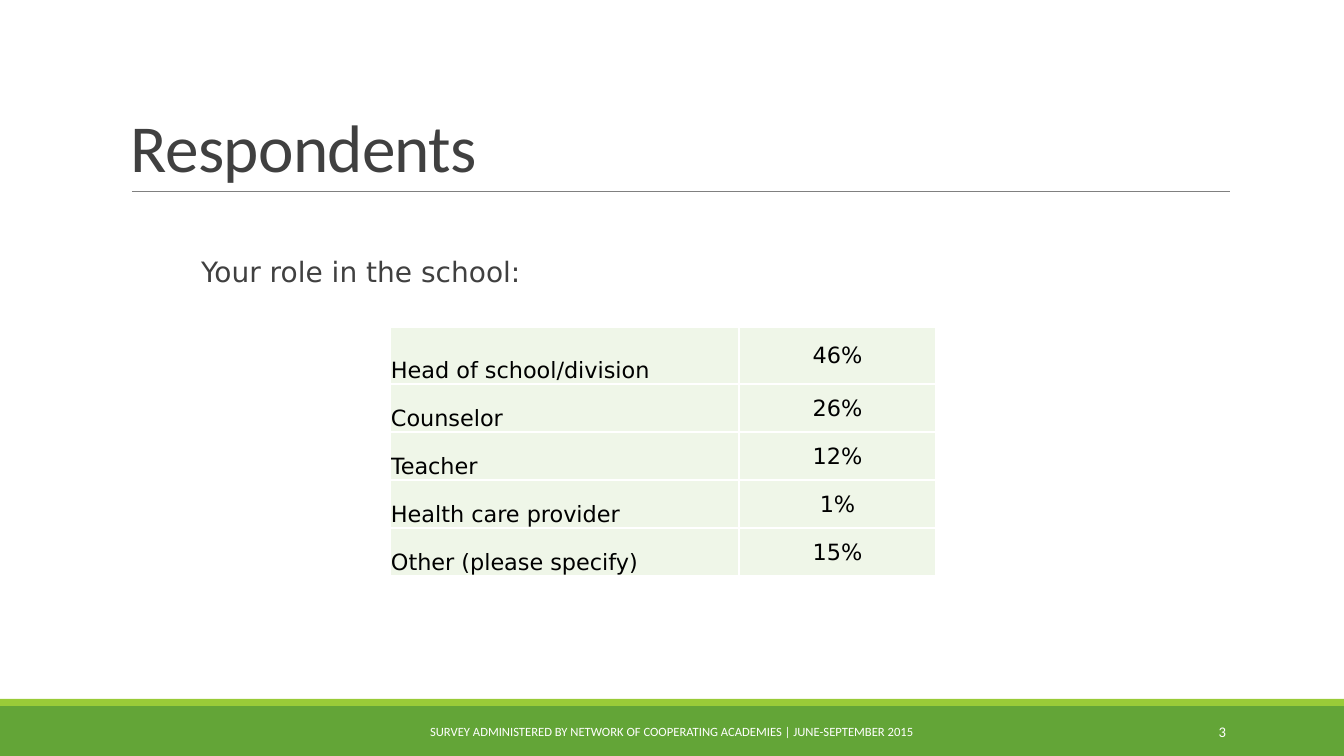
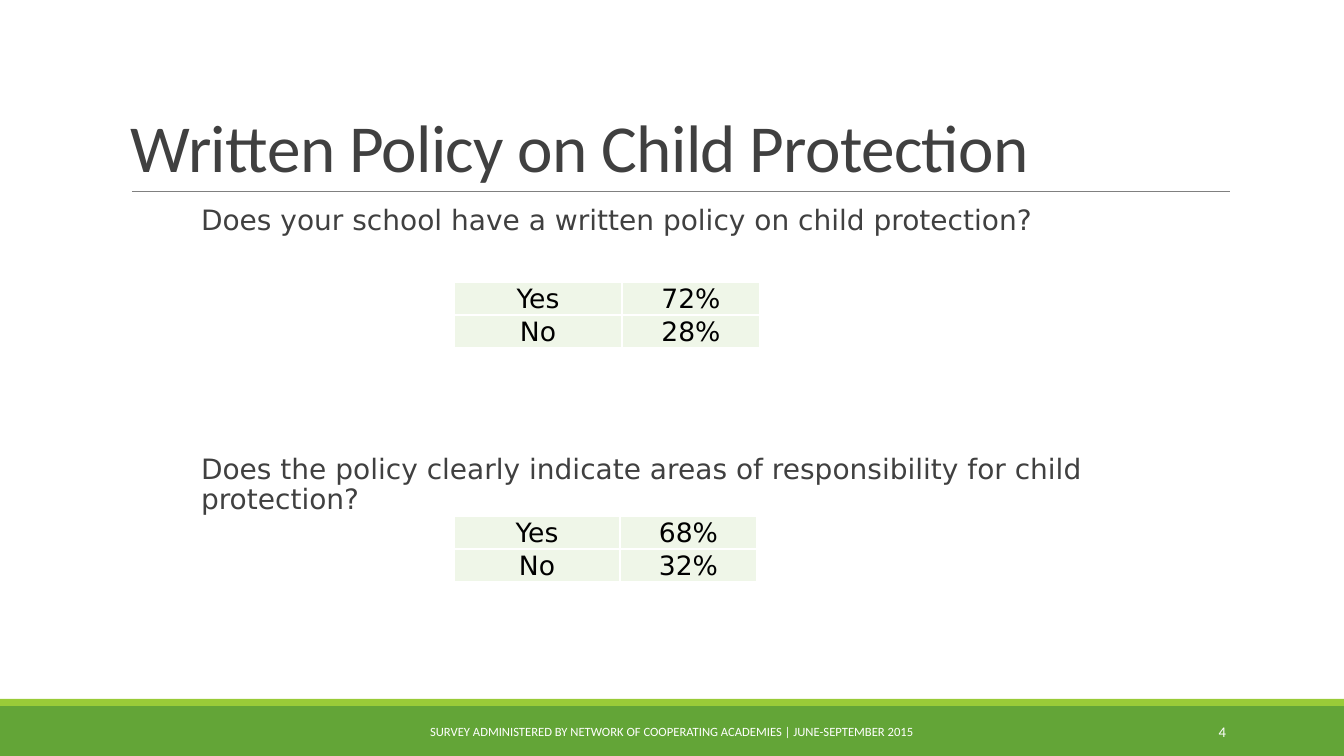
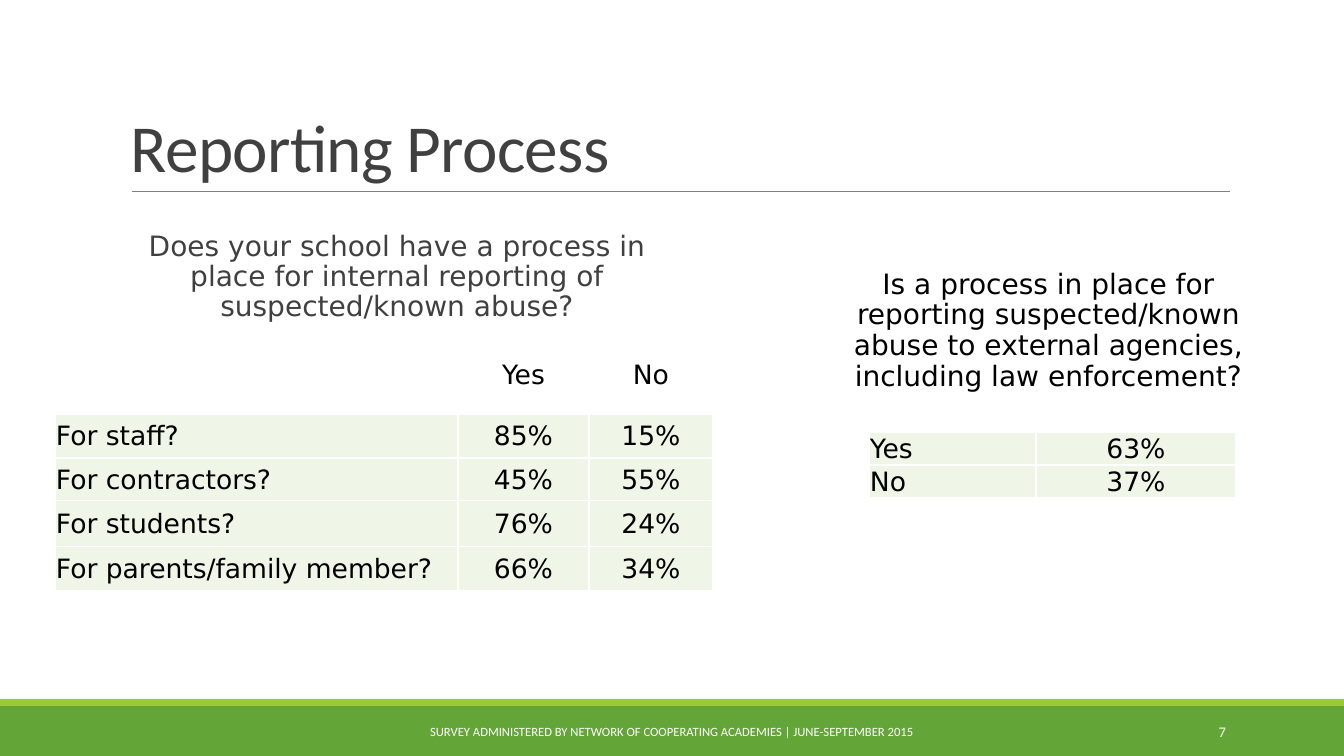
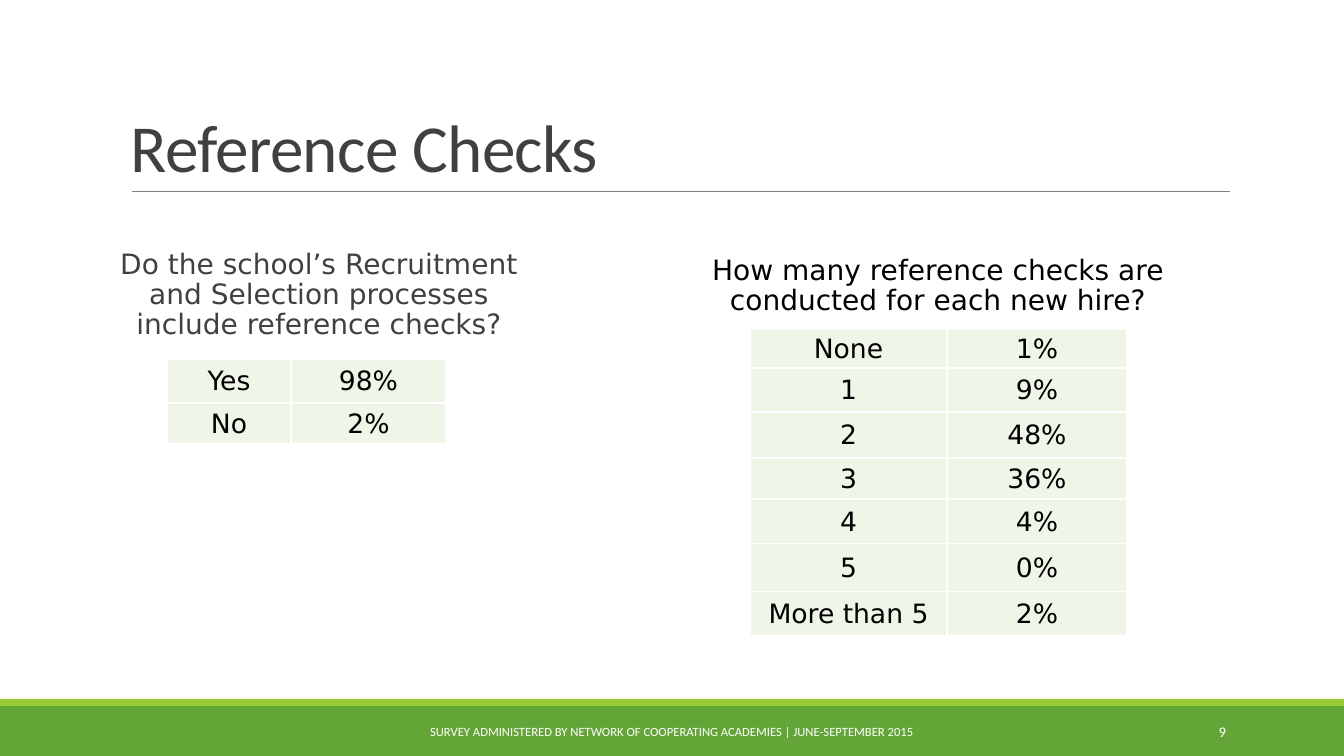
from lxml.etree import SubElement
from pptx import Presentation
from pptx.dml.color import RGBColor
from pptx.enum.shapes import MSO_CONNECTOR, MSO_SHAPE
from pptx.enum.text import MSO_ANCHOR, PP_ALIGN
from pptx.oxml.ns import qn
from pptx.util import Pt

EMU_PER_PX = 12192000 / 1344
WIDTH, HEIGHT = 1344, 756

GREEN, LIME, RULE = "63A537", "99CB38", "808080"
PALE, WHITE, BLACK, DARK = "EFF6E8", "FFFFFF", "000000", "404040"

LEFT, CENTER, RIGHT = PP_ALIGN.LEFT, PP_ALIGN.CENTER, PP_ALIGN.RIGHT
TOP, MIDDLE, BOTTOM = MSO_ANCHOR.TOP, MSO_ANCHOR.MIDDLE, MSO_ANCHOR.BOTTOM

HEADING = {"name": "Calibri", "size": Pt(48), "color": DARK}
FOOTER = {"name": "Calibri", "size": Pt(9), "color": WHITE}
PAGE = {"name": "Calibri", "size": Pt(10.5), "color": WHITE}
QUESTION = {"name": "DejaVu Sans", "size": Pt(20), "color": DARK}
SIDE_QUESTION = {**QUESTION, "color": BLACK}
ANSWER = {"name": "DejaVu Sans", "size": Pt(19), "color": BLACK}
SMALL_ANSWER = {**ANSWER, "size": Pt(16)}

FOOTER_TEXT = ("SURVEY ADMINISTERED BY NETWORK OF COOPERATING ACADEMIES"
               " | JUNE-SEPTEMBER 2015")


def px(value):
    return round(value * EMU_PER_PX)


def rgb(color):
    return RGBColor.from_string(color)


def set_margins(target, margins):
    for side, margin in zip(("left", "top", "right", "bottom"), margins):
        setattr(target, f"margin_{side}", px(margin))


def write(frame, text, style, align, spacing=None, tracking=None):
    paragraph = frame.paragraphs[0]
    paragraph.alignment = align
    paragraph.line_spacing = spacing
    run = paragraph.add_run()
    run.text = text
    for attribute, value in style.items():
        if attribute == "color":
            run.font.color.rgb = rgb(value)
        else:
            setattr(run.font, attribute, value)
    if tracking is not None:
        run._r.get_or_add_rPr().set("spc", str(tracking))


def add_text(slide, box, text, style, align=LEFT, anchor=TOP,
             margins=(10, 5, 10, 5), **paragraph_format):
    frame = slide.shapes.add_textbox(*map(px, box)).text_frame
    frame.word_wrap = True
    frame.vertical_anchor = anchor
    set_margins(frame, margins)
    write(frame, text, style, align, **paragraph_format)


def add_question(slide, box, text, align=LEFT):
    add_text(slide, box, text, QUESTION, align,
             margins=(10, 5, 0, 5), spacing=0.9)


def add_side_question(slide, box, text):
    add_text(slide, box, text, SIDE_QUESTION, CENTER,
             margins=(0, 0, 0, 0), spacing=Pt(22))


def add_band(slide, top, height, color):
    band = slide.shapes.add_shape(MSO_SHAPE.RECTANGLE,
                                  *map(px, (0, top, WIDTH, height)))
    band.shadow.inherit = False
    band.fill.solid()
    band.fill.fore_color.rgb = rgb(color)
    band.line.fill.background()


def add_rule(slide, left, right, y):
    rule = slide.shapes.add_connector(MSO_CONNECTOR.STRAIGHT,
                                      *map(px, (left, y, right, y)))
    rule.line.color.rgb = rgb(RULE)
    rule.line.width = Pt(0.5)
    SubElement(rule._element.spPr, qn("a:effectLst"))


def add_borders(cell):
    properties = cell._tc.get_or_add_tcPr()
    for edge in ("lnL", "lnR", "lnT", "lnB"):
        line = SubElement(properties, qn(f"a:{edge}"), w=str(Pt(1)))
        fill = SubElement(line, qn("a:solidFill"))
        SubElement(fill, qn("a:srgbClr"), val=WHITE)


def add_answers(slide, left, top, columns, heights, rows, style=ANSWER,
                label_align=CENTER, label_anchor=MIDDLE, header=False):
    table = slide.shapes.add_table(
        len(rows), len(columns),
        *map(px, (left, top, sum(columns), sum(heights)))).table
    table.first_row = table.horz_banding = False
    for column, width in zip(table.columns, columns):
        column.width = px(width)
    for row, height in zip(table.rows, heights):
        row.height = px(height)
    for r, values in enumerate(rows):
        for c, value in enumerate(values):
            cell = table.cell(r, c)
            add_borders(cell)
            cell.fill.solid()
            cell.fill.fore_color.rgb = rgb(WHITE if header and r == 0 else PALE)
            set_margins(cell, (1, 1, 1, 0))
            cell.vertical_anchor = MIDDLE if c else label_anchor
            if value:
                write(cell.text_frame, value, style,
                      CENTER if c else label_align)


def add_survey_slide(deck, title, number):
    """Add a slide with the shared bands, title, rule and footer."""
    slide = deck.slides.add_slide(deck.slide_layouts[6])
    add_band(slide, 706, 50, GREEN)
    add_band(slide, 699, 7, LIME)
    add_rule(slide, 132, 1230, 191)
    add_text(slide, (121, 31, 1109, 160), title, HEADING, anchor=BOTTOM,
             spacing=0.85, tracking=-50)
    add_text(slide, (406, 712, 531, 40), FOOTER_TEXT, FOOTER, CENTER, MIDDLE)
    add_text(slide, (1092, 712, 144, 40), str(number), PAGE, RIGHT, MIDDLE)
    return slide


def add_respondents(deck):
    slide = add_survey_slide(deck, "Respondents", 3)
    add_question(slide, (191, 253, 944, 382), "Your role in the school:")
    roles = [("Head of school/division", "46%"), ("Counselor", "26%"),
             ("Teacher", "12%"), ("Health care provider", "1%"),
             ("Other (please specify)", "15%")]
    add_answers(slide, 390, 327, (349, 197), (57, 48, 48, 48, 48), roles,
                SMALL_ANSWER, LEFT, BOTTOM)


def add_written_policy(deck):
    slide = add_survey_slide(deck, "Written Policy on Child Protection", 4)
    add_question(slide, (191, 201, 944, 60),
                 "Does your school have a written policy on child protection?")
    add_answers(slide, 454, 282, (168, 138), (32, 32),
                [("Yes", "72%"), ("No", "28%")], label_anchor=BOTTOM)
    add_question(slide, (191, 450, 944, 70),
                 "Does the policy clearly indicate areas of responsibility "
                 "for child protection?")
    add_answers(slide, 454, 516, (166, 137), (32, 32),
                [("Yes", "68%"), ("No", "32%")], label_anchor=BOTTOM)


def add_reporting_process(deck):
    slide = add_survey_slide(deck, "Reporting Process", 7)
    # Internal reporting
    add_question(slide, (112, 227, 560, 105),
                 "Does your school have a process in place for internal "
                 "reporting of suspected/known abuse?", CENTER)
    groups = [("", "Yes", "No"), ("For staff?", "85%", "15%"),
              ("For contractors?", "45%", "55%"),
              ("For students?", "76%", "24%"),
              ("For parents/family member?", "66%", "34%")]
    add_answers(slide, 55, 335, (403, 131, 124), (79, 44, 43, 46, 44), groups,
                label_align=LEFT, header=True)
    # External agencies
    add_side_question(slide, (846, 269, 405, 130),
                      "Is a process in place for reporting suspected/known "
                      "abuse to external agencies, including law enforcement?")
    add_answers(slide, 869, 432, (167, 200), (32, 32),
                [("Yes", "63%"), ("No", "37%")],
                label_align=LEFT, label_anchor=BOTTOM)


def add_reference_checks(deck):
    slide = add_survey_slide(deck, "Reference Checks", 9)
    # Whether checks are made
    add_question(slide, (107, 245, 414, 105),
                 "Do the school’s Recruitment and Selection processes "
                 "include reference checks?", CENTER)
    add_answers(slide, 167, 359, (124, 155), (44, 41),
                [("Yes", "98%"), ("No", "2%")])
    # Number of checks
    add_side_question(slide, (706, 255, 464, 70),
                      "How many reference checks are conducted for each "
                      "new hire?")
    counts = [("None", "1%"), ("1", "9%"), ("2", "48%"), ("3", "36%"),
              ("4", "4%"), ("5", "0%"), ("More than 5", "2%")]
    add_answers(slide, 750, 329, (197, 180), (39, 44, 46, 41, 45, 48, 44),
                counts)


def main():
    deck = Presentation()
    deck.slide_width, deck.slide_height = px(WIDTH), px(HEIGHT)
    add_respondents(deck)
    add_written_policy(deck)
    add_reporting_process(deck)
    add_reference_checks(deck)
    deck.save("out.pptx")


if __name__ == "__main__":
    main()
